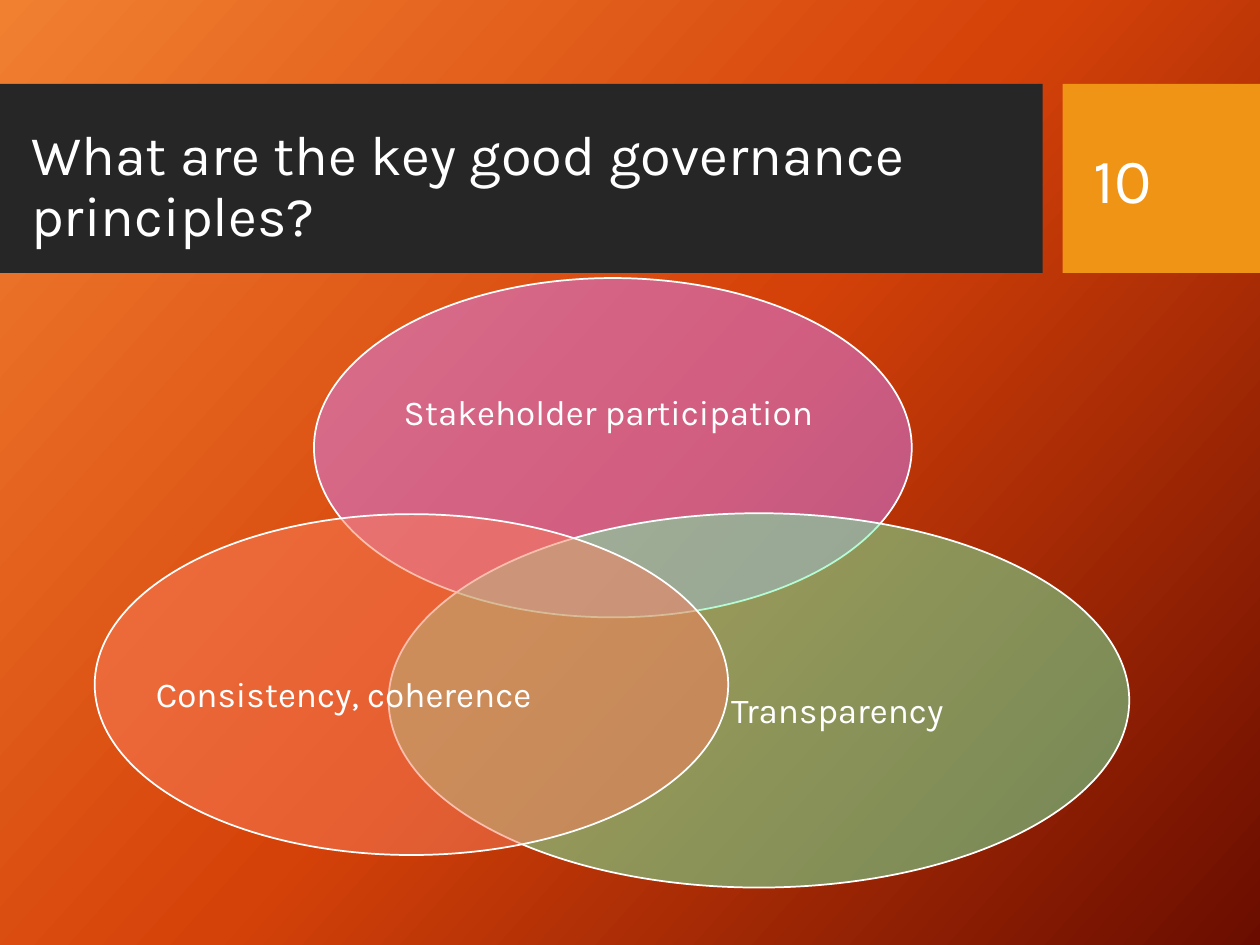
from copy import deepcopy

from lxml.etree import SubElement
from pptx import Presentation
from pptx.dml.color import RGBColor
from pptx.enum.shapes import MSO_SHAPE as Shape
from pptx.enum.text import MSO_ANCHOR as Anchor, PP_ALIGN as Align
from pptx.oxml.ns import qn
from pptx.util import Pt

WHITE = RGBColor(0xFF, 0xFF, 0xFF)
CHARCOAL = RGBColor(0x26, 0x26, 0x26)
AMBER = RGBColor(0xF0, 0x94, 0x15)
VIOLET = RGBColor(0xD1, 0x7D, 0xF9)
MINT = RGBColor(0x6D, 0xF9, 0xAB)
CORAL = RGBColor(0xFA, 0x7E, 0x5C)
BACKGROUND = [
    (0, RGBColor(0xF1, 0x80, 0x31)),
    (0.5, RGBColor(0xD5, 0x42, 0x09)),
    (1, RGBColor(0x6A, 0x0D, 0x00)),
]

presentation = Presentation()
presentation.slide_width, presentation.slide_height = Pt(720), Pt(540)
slide = presentation.slides.add_slide(presentation.slide_layouts[6])


def add_shape(kind, box, color):
    shape = slide.shapes.add_shape(kind, *map(Pt, box))
    shape.shadow.inherit = False
    shape.fill.solid()
    shape.fill.fore_color.rgb = color
    shape.line.fill.background()
    return shape


def add_text(box, text, size, inset=None, **paragraph_format):
    frame = slide.shapes.add_textbox(*map(Pt, box)).text_frame
    frame.word_wrap = True
    frame.vertical_anchor = Anchor.MIDDLE
    if inset is not None:
        for side in ("left", "top", "right", "bottom"):
            setattr(frame, f"margin_{side}", Pt(inset))
    paragraph = frame.paragraphs[0]
    paragraph.text = text
    for name, value in paragraph_format.items():
        setattr(paragraph, name, value)
    font = paragraph.font
    font.name, font.size, font.color.rgb = "Karla", Pt(size), WHITE


# Background gradient: a third stop is added to the default two
fill = slide.background.fill
fill.gradient()
fill.gradient_angle = 360 - 42
stop_list = next(slide.element.iter(qn("a:gsLst")))
stop_list.append(deepcopy(stop_list[-1]))
for stop, (position, color) in zip(fill.gradient_stops, BACKGROUND):
    stop.position = position
    stop.color.rgb = color

# Title band and slide number block
add_shape(Shape.RECTANGLE, (0, 48, 595.75, 108), CHARCOAL)
add_shape(Shape.RECTANGLE, (607.25, 48, 112.75, 108), AMBER)
add_text((10.8, 51.8, 602.6, 110.9), "What are the key good governance principles?",
         32, line_spacing=0.9)

# Overlapping ellipses, each with its label
PRINCIPLES = [
    ("Stakeholder participation", VIOLET,
     (179.4, 158.9, 341.6, 193.9), (222.5, 193, 250.6, 87.1)),
    ("Transparency", MINT,
     (222.1, 293.3, 423.2, 213.9), (351.4, 348.5, 254.2, 117.4)),
    ("Consistency, coherence", CORAL,
     (54.1, 293.8, 362, 194.8), (87.8, 344.2, 217.4, 107.3)),
]
for label, color, ellipse_box, label_box in PRINCIPLES:
    ellipse = add_shape(Shape.OVAL, ellipse_box, color)
    ellipse.line.color.rgb = WHITE
    ellipse.line.width = Pt(1)
    solid_color = ellipse.element.spPr.find(qn("a:solidFill"))[0]
    SubElement(solid_color, qn("a:alpha"), val="50000")
    add_text(label_box, label, 20, inset=0, alignment=Align.CENTER,
             line_spacing=0.9, space_after=Pt(7))

# Slide number
add_text((617.8, 59, 91.4, 85.7), "10", 36)

presentation.save("out.pptx")
